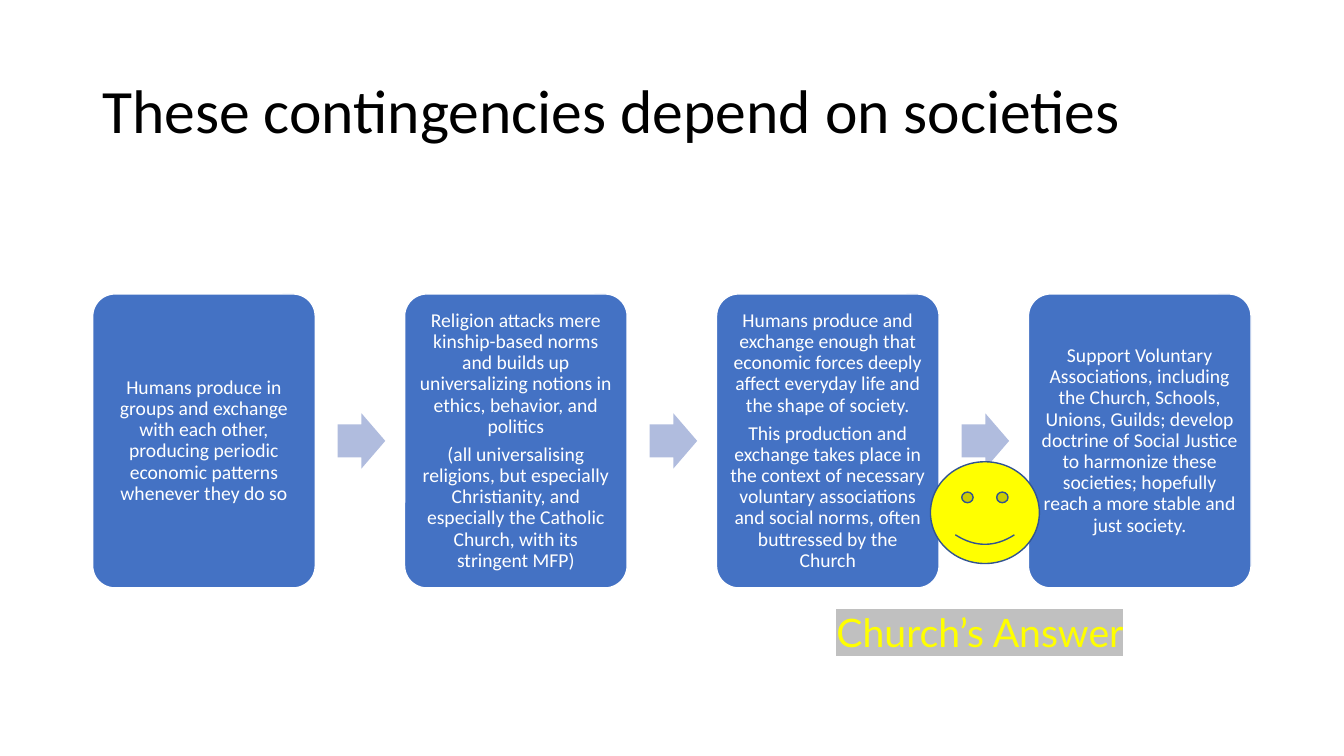
from lxml import etree
from pptx import Presentation
from pptx.dml.color import RGBColor
from pptx.enum import shapes, text
from pptx.oxml.ns import qn
from pptx.util import Pt

FIRST_LEFT, PITCH = 66.2, 222.8
STEP_TOP, STEP_WIDTH, STEP_HEIGHT = 210, 159, 210
ARROW_OFFSET, ARROW_TOP, ARROW_WIDTH, ARROW_HEIGHT = 175, 295.2, 34, 39.5
STEP_INSET = 4.2

STEPS = [
    ["Humans produce in groups and exchange with each other, producing "
     "periodic economic patterns whenever they do so"],
    ["Religion attacks mere kinship-based norms and builds up universalizing "
     "notions in ethics, behavior, and politics",
     "(all universalising religions, but especially Christianity, and "
     "especially the Catholic Church, with its stringent MFP)"],
    ["Humans produce and exchange enough that economic forces deeply affect "
     "everyday life and the shape of society.",
     "This production and exchange takes place in the context of necessary "
     "voluntary associations and social norms, often buttressed by the Church"],
    ["Support Voluntary Associations, including the Church, Schools, Unions, "
     "Guilds; develop doctrine of Social Justice to harmonize these "
     "societies; hopefully reach a more stable and just society."],
]


def color(hex_value):
    return RGBColor.from_string(hex_value)


def set_format(target, values):
    for name, value in values.items():
        setattr(target, name, value)


def write(frame, paragraphs, size, font, hex_color, frame_format, paragraph_format):
    set_format(frame, {"word_wrap": True, **frame_format})
    for index, words in enumerate(paragraphs):
        paragraph = frame.add_paragraph() if index else frame.paragraphs[0]
        set_format(paragraph, paragraph_format)
        run = paragraph.add_run()
        run.text = words
        set_format(run.font, {"size": Pt(size), "name": font})
        run.font.color.rgb = color(hex_color)


def add_label(slide, box, words, size, font, hex_color, anchor, spacing):
    label = slide.shapes.add_textbox(*map(Pt, box))
    write(label.text_frame, [words], size, font, hex_color,
          {"vertical_anchor": anchor}, {"line_spacing": spacing})
    return label.text_frame.paragraphs[0].runs[0]


def highlight(run, hex_color):
    mark = etree.Element(qn("a:highlight"))
    etree.SubElement(mark, qn("a:srgbClr"), val=hex_color)
    run.font._element.find(qn("a:latin")).addprevious(mark)


def add_figure(slide, kind, box, fill, line=None, adjustments=()):
    figure = slide.shapes.add_shape(kind, *map(Pt, box))
    figure.shadow.inherit = False
    figure.fill.solid()
    figure.fill.fore_color.rgb = color(fill)
    if line:
        figure.line.color.rgb = color(line)
        figure.line.width = Pt(1)
    else:
        figure.line.fill.background()
    for index, value in enumerate(adjustments):
        figure.adjustments[index] = value
    return figure


def add_step(slide, left, paragraphs):
    step = add_figure(slide, shapes.MSO_SHAPE.ROUNDED_RECTANGLE,
                      (left, STEP_TOP, STEP_WIDTH, STEP_HEIGHT),
                      "4472C4", "FFFFFF", [0.1])
    insets = {f"margin_{side}": Pt(STEP_INSET)
              for side in ("left", "top", "right", "bottom")}
    write(step.text_frame, paragraphs, 14, "Calibri", "FFFFFF",
          {"vertical_anchor": text.MSO_ANCHOR.MIDDLE, **insets},
          {"alignment": text.PP_ALIGN.CENTER, "line_spacing": 0.9,
           "space_after": Pt(5)})


def add_process(slide):
    for index, paragraphs in enumerate(STEPS):
        left = FIRST_LEFT + index * PITCH
        add_step(slide, left, paragraphs)
        if index < len(STEPS) - 1:
            add_figure(slide, shapes.MSO_SHAPE.RIGHT_ARROW,
                       (left + ARROW_OFFSET, ARROW_TOP, ARROW_WIDTH, ARROW_HEIGHT),
                       "B0BCDE", adjustments=[0.6, 0.5])


def main():
    deck = Presentation()
    set_format(deck, {"slide_width": Pt(960), "slide_height": Pt(540)})
    slide = deck.slides.add_slide(deck.slide_layouts[6])
    add_label(slide, (66, 28.8, 828, 104.4), "These contingencies depend on societies",
              44, "Calibri", "000000", text.MSO_ANCHOR.MIDDLE, 0.9)
    add_process(slide)
    answer = add_label(slide, (590.4, 431.3, 225.4, 41), "Church’s Answer",
                       28, "Lato", "FFFF00", text.MSO_ANCHOR.TOP, 1.0)
    highlight(answer, "C0C0C0")
    add_figure(slide, shapes.MSO_SHAPE.SMILEY_FACE, (664.6, 329.8, 77.8, 72.7),
               "FFFF00", "325491")
    deck.save("out.pptx")


if __name__ == "__main__":
    main()
